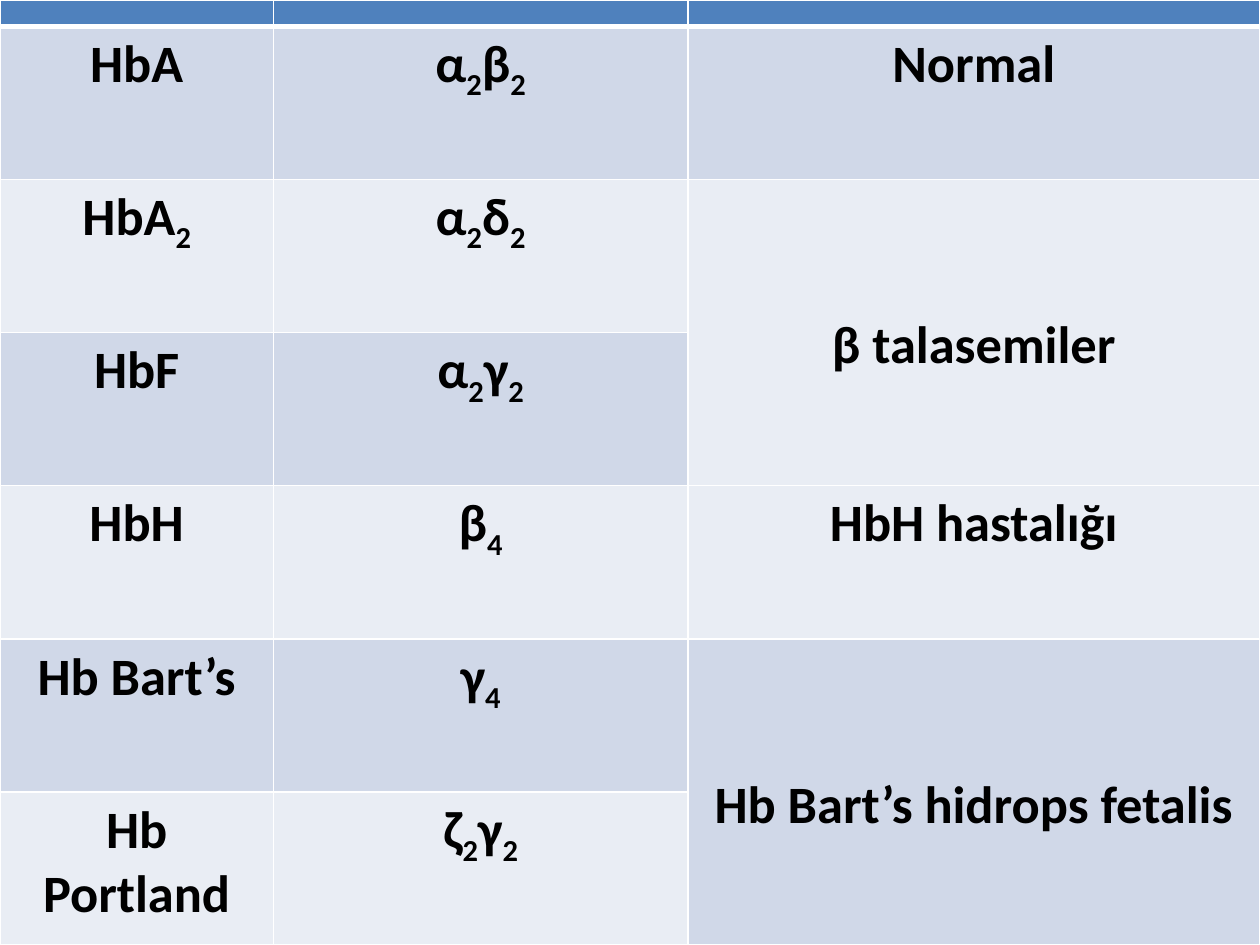
from dataclasses import dataclass
from itertools import groupby

from lxml.etree import SubElement
from pptx import Presentation
from pptx.dml.color import RGBColor
from pptx.enum.text import MSO_ANCHOR, PP_ALIGN
from pptx.oxml.ns import qn
from pptx.table import Table, _Cell
from pptx.util import Inches, Pt

HUES = {"head": "4F81BD", "dark": "D0D8E8", "light": "E9EDF4",
        "line": "FFFFFF", "text": "000000"}
COLS = (2.17, 3.29, 4.54)
HEAD = 0.21


@dataclass
class Row:
    """One haemoglobin, its chains and the disorder it marks."""
    name: str
    chains: str
    state: str = ""
    span: int = 1


ROWS = (
    Row("HbA", "α2β2", "Normal"),
    Row("HbA2", "α2δ2", "β talasemiler", 2),
    Row("HbF", "α2γ2"),
    Row("HbH", "β4", "HbH hastalığı"),
    Row("Hb Bart’s", "γ4", "Hb Bart’s hidrops fetalis", 2),
    Row("Hb Portland", "ζ2γ2"),
)


def paint(cell: _Cell, hue: str, top: int = 1, base: int = 1) -> None:
    """Set the borders and then the fill of a cell."""
    props = cell._tc.get_or_add_tcPr()
    for side, width in (("L", 1), ("R", 1), ("T", top), ("B", base)):
        line = SubElement(props, qn(f"a:ln{side}"), w=str(Pt(width)))
        fill = SubElement(line, qn("a:solidFill"))
        SubElement(fill, qn("a:srgbClr"), val=HUES["line"])
    cell.fill.solid()
    cell.fill.fore_color.rgb = RGBColor.from_string(HUES[hue])


def write(cell: _Cell, text: str, *, size: int = 30, bold: bool = True,
          hue: str = "text", face: str = "Calibri") -> None:
    """Write centred text with its digits as subscripts."""
    para = cell.text_frame.paragraphs[0]
    para.alignment = PP_ALIGN.CENTER
    for digit, part in groupby(text, str.isdigit):
        run = para.add_run()
        run.text = "".join(part)
        font = run.font
        font.size, font.bold, font.name = Pt(size), bold, face
        font.color.rgb = RGBColor.from_string(HUES[hue])
        if digit:
            font._element.set("baseline", "-25000")


def draw_head(table: Table) -> None:
    """Draw the thin empty band at the top."""
    for cell in table.rows[0].cells:
        paint(cell, "head", base=3)
        cell.margin_top = cell.margin_bottom = 0
        para = cell.text_frame.paragraphs[0]._p
        SubElement(para, qn("a:endParaRPr"), sz="800")


def draw_row(table: Table, at: int, row: Row) -> None:
    """Draw one row, joining its last cell downwards when it spans."""
    hue = "dark" if at % 2 else "light"
    for col, text in enumerate((row.name, row.chains, row.state)):
        cell = table.cell(at, col)
        paint(cell, hue, top=3 if at == 1 else 1)
        if text:
            write(cell, text)
    if row.span > 1:
        cell = table.cell(at, 2)
        cell.merge(table.cell(at + row.span - 1, 2))
        cell.vertical_anchor = MSO_ANCHOR.MIDDLE
        cell.margin_top = Inches(0.26)


def main() -> None:
    """Build the slide and save it."""
    deck = Presentation()
    deck.slide_width, deck.slide_height = Inches(10), Inches(7.5)
    slide = deck.slides.add_slide(deck.slide_layouts[6])
    frame = slide.shapes.add_table(len(ROWS) + 1, len(COLS), 0, 0,
                                   Inches(10), Inches(7.5))
    table = frame.table
    for col, width in zip(table.columns, COLS):
        col.width = Inches(width)
    for at, line in enumerate(table.rows):
        line.height = Inches((7.5 - HEAD) / len(ROWS) if at else HEAD)
    draw_head(table)
    for at, row in enumerate(ROWS, 1):
        draw_row(table, at, row)
    deck.save("out.pptx")


if __name__ == "__main__":
    main()
